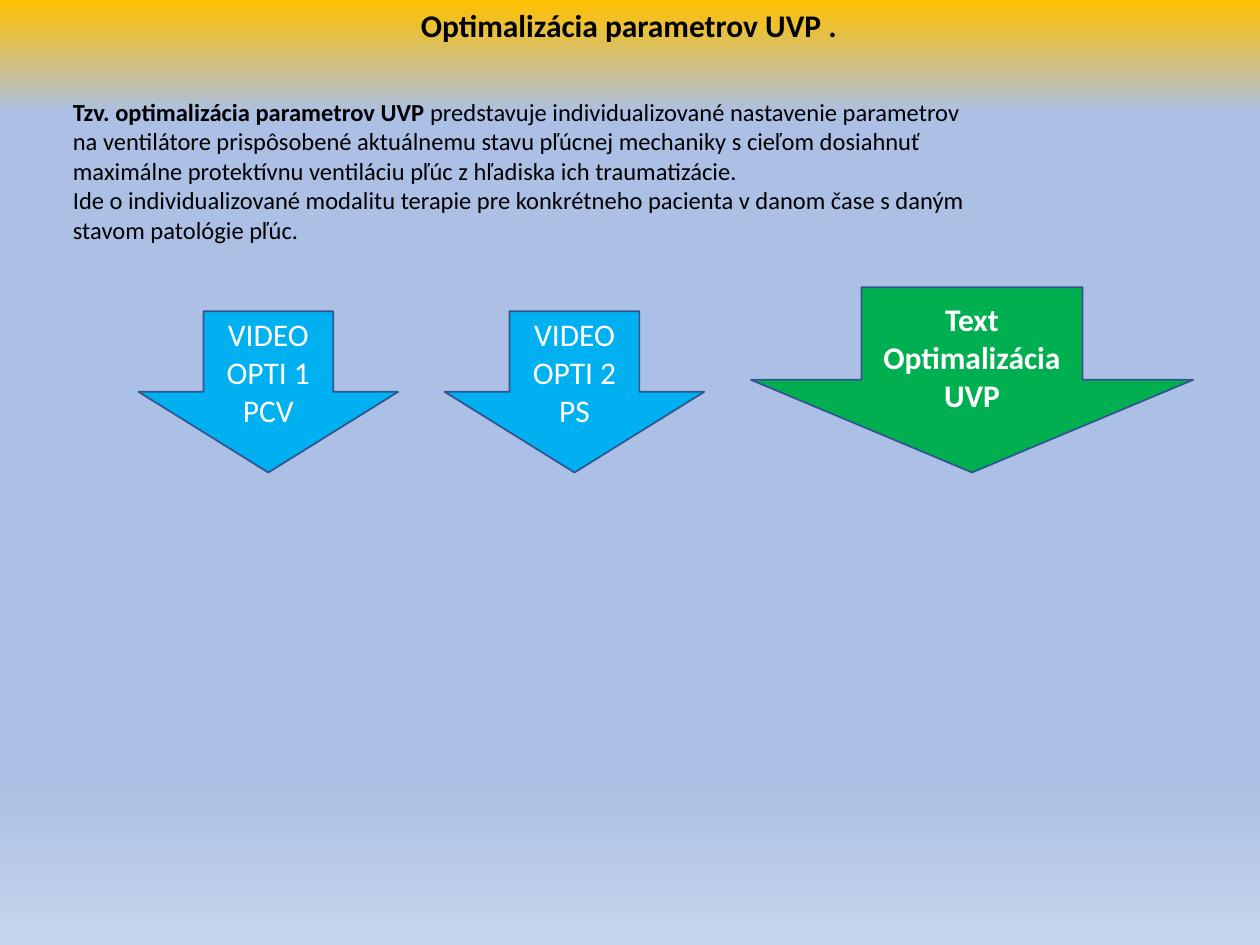
from lxml import etree
from pptx import Presentation
from pptx.dml.color import RGBColor
from pptx.enum.shapes import MSO_SHAPE
from pptx.enum.text import MSO_ANCHOR, MSO_AUTO_SIZE, PP_ALIGN
from pptx.oxml.ns import qn
from pptx.util import Inches, Pt

DOWN_ARROW = MSO_SHAPE.DOWN_ARROW
TOP, MIDDLE = MSO_ANCHOR.TOP, MSO_ANCHOR.MIDDLE
LEFT, CENTER = PP_ALIGN.LEFT, PP_ALIGN.CENTER
FIT_SHAPE = MSO_AUTO_SIZE.SHAPE_TO_FIT_TEXT

COLORS = {
    "gold": "FFC000", "sky": "ABC0E4", "pale": "C7D5ED", "blue": "00B0F0",
    "green": "00B050", "outline": "325491", "black": "000000", "white": "FFFFFF",
}
STOPS = [(0, "gold"), (12, "sky"), (83, "sky"), (100, "pale")]
FONT = "Calibri"

TITLE = "Optimalizácia parametrov UVP ."
BODY = [
    [("Tzv. optimalizácia parametrov UVP ", True),
     ("predstavuje individualizované nastavenie parametrov", False)],
    [("na ventilátore prispôsobené aktuálnemu stavu pľúcnej mechaniky s cieľom "
      "dosiahnuť maximálne protektívnu ventiláciu pľúc z hľadiska ich traumatizácie.", False)],
    [("Ide o individualizované modalitu terapie pre konkrétneho pacienta v danom čase "
      "s daným stavom patológie pľúc.", False)],
]
ARROW_BOTTOM = 3.75
ARROWS = [
    {"lines": ["VIDEO", "OPTI 1", "PCV"], "left": 1.1, "size": (2.06, 1.28),
     "fill": "blue", "bold": False},
    {"lines": ["VIDEO", "OPTI 2", "PS"], "left": 3.53, "size": (2.06, 1.28),
     "fill": "blue", "bold": False},
    {"lines": ["Text", "Optimalizácia UVP"], "left": 5.96, "size": (3.51, 1.47),
     "fill": "green", "bold": True},
]


def rgb(name):
    return RGBColor.from_string(COLORS[name])


def write(tf, paragraphs, size, color, align=LEFT):
    for i, runs in enumerate(paragraphs):
        p = tf.add_paragraph() if i else tf.paragraphs[0]
        p.alignment = align
        for text, bold in runs:
            r = p.add_run()
            r.text = text
            r.font.name, r.font.size, r.font.bold = FONT, Pt(size), bold
            r.font.color.rgb = rgb(color)


def paint_background(s):
    fill = s.background.fill
    fill.gradient()
    fill.gradient_angle = 270
    stops = next(s.element.iter(qn("a:gsLst")))
    for gs in list(stops):
        stops.remove(gs)
    for pos, color in STOPS:
        gs = etree.SubElement(stops, qn("a:gs"), pos=str(pos * 1000))
        etree.SubElement(gs, qn("a:srgbClr"), val=COLORS[color])


def add_title(s):
    sp = s.shapes.title
    sp.left, sp.top, sp.width, sp.height = map(Inches, (3.24, 0, 3.52, 0.4))
    tf = sp.text_frame
    tf.word_wrap, tf.auto_size, tf.vertical_anchor = False, FIT_SHAPE, TOP
    write(tf, [[(TITLE, True)]], 18, "black")


def add_body(s):
    tf = s.shapes.add_textbox(*map(Inches, (0.48, 0.72, 7.81, 1.28))).text_frame
    tf.word_wrap, tf.auto_size = True, FIT_SHAPE
    write(tf, BODY, 14, "black")


def add_arrow(s, arrow):
    width, height = arrow["size"]
    box = (arrow["left"], ARROW_BOTTOM - height, width, height)
    sp = s.shapes.add_shape(DOWN_ARROW, *map(Inches, box))
    sp.shadow.inherit = False
    sp.fill.solid()
    sp.fill.fore_color.rgb = rgb(arrow["fill"])
    sp.line.color.rgb = rgb("outline")
    sp.line.width = Pt(1)
    tf = sp.text_frame
    tf.word_wrap, tf.vertical_anchor = True, MIDDLE
    write(tf, [[(line, arrow["bold"])] for line in arrow["lines"]], 18, "white", CENTER)


def main():
    """Build the slide on optimising ventilation parameters."""
    prs = Presentation()
    prs.slide_width, prs.slide_height = Inches(10), Inches(7.5)
    s = prs.slides.add_slide(prs.slide_layouts[5])
    paint_background(s)
    add_title(s)
    add_body(s)
    for arrow in ARROWS:
        add_arrow(s, arrow)
    prs.save("out.pptx")


if __name__ == "__main__":
    main()
